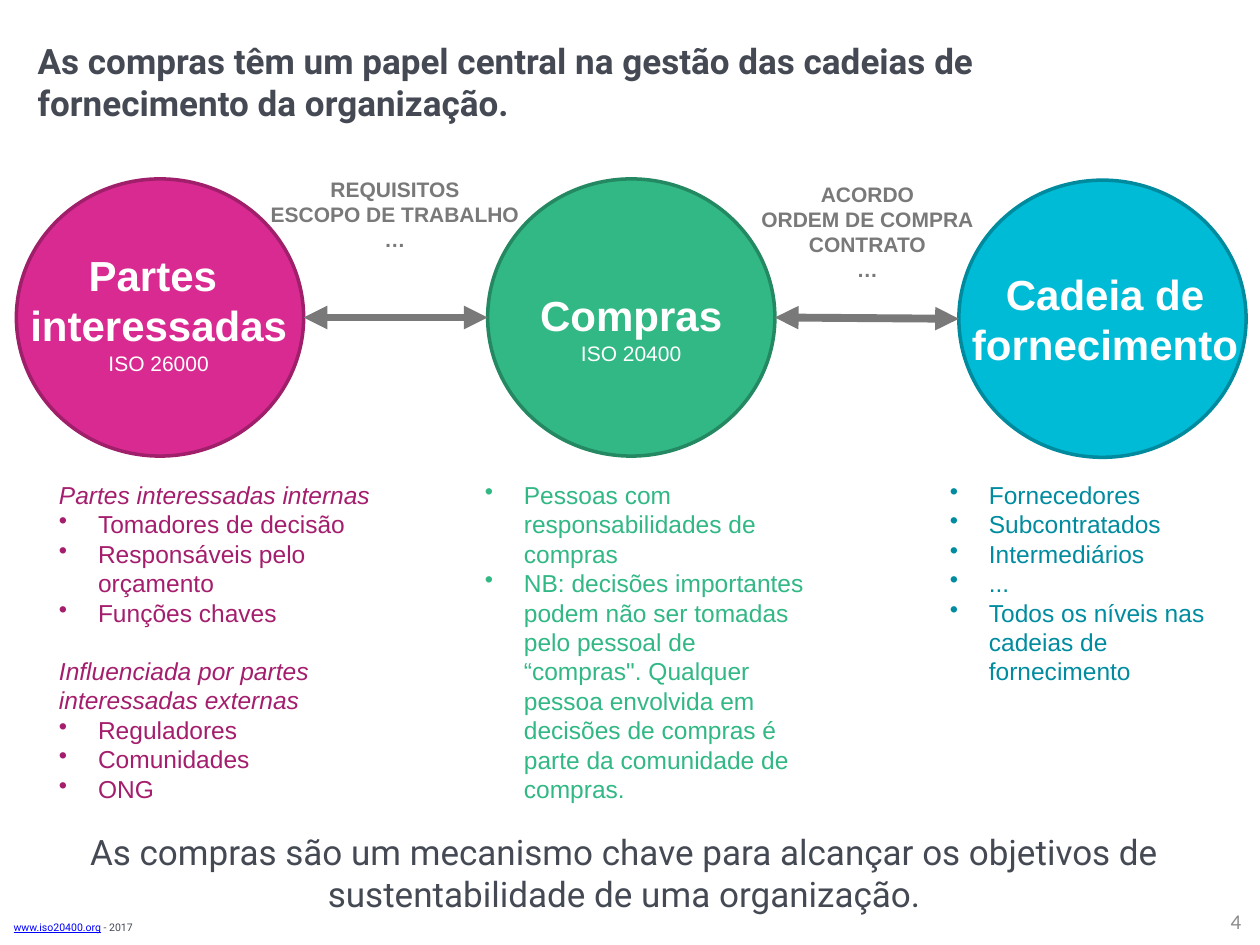
"""Build a slide on the central role of procurement in supply chains."""
import pptx
import pptx.dml.color
import pptx.enum.shapes
import pptx.enum.text
import pptx.oxml.ns
import pptx.util
from lxml import etree

Inches = pptx.util.Inches
Pt = pptx.util.Pt
ALIGN = {
    "left": pptx.enum.text.PP_ALIGN.LEFT,
    "center": pptx.enum.text.PP_ALIGN.CENTER,
    "right": pptx.enum.text.PP_ALIGN.RIGHT,
}
ANCHOR = {
    "top": pptx.enum.text.MSO_ANCHOR.TOP,
    "middle": pptx.enum.text.MSO_ANCHOR.MIDDLE,
}

DARK, GRAY, WHITE = "444953", "797979", "FFFFFF"
CIRCLE_WIDTH, CIRCLE_HEIGHT = 2.28, 2.2
CIRCLES = [
    (0.13, 1.42, "D82A91", "A01F6B"),
    (3.87, 1.42, "31B885", "248862"),
    (7.61, 1.43, "00BBD6", "008A9E"),
]
CIRCLE_TEXTS = [
    ((0.13, 1.93, 2.26, 1.11), False,
     ["Partes ", "interessadas", {"text": "ISO 26000", "size": 12, "bold": False}]),
    ((4.18, 2.25, 1.66, 0.71), False,
     ["Compras", {"text": "ISO 20400", "size": 12, "bold": False}]),
    ((7, 2.08, 3.54, 0.91), True, ["Cadeia de fornecimento"]),
]
ARROW_LABELS = [
    ((1.72, 1.35, 2.83, 0.71), "REQUISITOS\nESCOPO DE TRABALHO\n…"),
    ((5.47, 1.39, 2.83, 0.91), "ACORDO\nORDEM DE COMPRA\nCONTRATO\n…"),
]
COLUMNS = [
    ((0.37, 3.76, 2.83, 2.69), "A41E6D", [
        ("Partes interessadas internas",
         ["Tomadores de decisão", "Responsáveis pelo orçamento", "Funções chaves"]),
        ("Influenciada por partes interessadas externas",
         ["Reguladores", "Comunidades", "ONG"]),
    ]),
    ((3.75, 3.76, 2.83, 2.69), "31B885", [
        (None, [
            "Pessoas com responsabilidades de compras",
            "NB: decisões importantes podem não ser tomadas pelo pessoal de “compras\". "
            "Qualquer pessoa envolvida em decisões de compras é parte da comunidade de compras.",
        ]),
    ]),
    ((7.44, 3.76, 2.46, 1.75), "008CA0", [
        (None, ["Fornecedores", "Subcontratados", "Intermediários", "...",
                "Todos os níveis nas cadeias de fornecimento"]),
    ]),
]
TITLE = "As compras têm um papel central na gestão das cadeias de fornecimento da organização."
MESSAGE = ("As compras são um mecanismo chave para alcançar os objetivos de "
           "sustentabilidade de uma organização.")


def rgb(color):
    return pptx.dml.color.RGBColor.from_string(color)


def add_bullet(paragraph):
    properties = paragraph._p.get_or_add_pPr()
    properties.set("marL", str(Inches(0.31)))
    properties.set("indent", str(-Inches(0.31)))
    bullet = etree.SubElement(properties, pptx.oxml.ns.qn("a:buChar"))
    bullet.set("char", "•")


def add_runs(paragraph, text, style):
    for index, line in enumerate(text.split("\n")):
        if index:
            paragraph.add_line_break()
        run = paragraph.add_run()
        run.text = line
        run.font.name = style["font"]
        run.font.size = Pt(style["size"])
        run.font.bold = style["bold"]
        run.font.italic = style["italic"]
        run.font.underline = style["underline"]
        run.font.color.rgb = rgb(style["color"])


def add_text(slide, box, paragraphs, wrap=True, anchor="top", align="left", **style):
    """Add a text box; a paragraph is a string, a dict of formats, or a list of runs."""
    base = {"font": "Arial", "size": 14, "color": DARK, "bold": False,
            "italic": False, "underline": False} | style
    frame = slide.shapes.add_textbox(*map(Inches, box)).text_frame
    frame.word_wrap = wrap
    frame.vertical_anchor = ANCHOR[anchor]
    for index, content in enumerate(paragraphs):
        paragraph = frame.add_paragraph() if index else frame.paragraphs[0]
        paragraph.alignment = ALIGN[align]
        for part in content if isinstance(content, list) else [content]:
            part = part if isinstance(part, dict) else {"text": part}
            if part.get("gap"):
                paragraph.space_before = Pt(part["gap"])
            if part.get("bullet"):
                add_bullet(paragraph)
            add_runs(paragraph, part["text"], base | part)


def add_circle(slide, left, top, fill, line):
    shape = slide.shapes.add_shape(
        pptx.enum.shapes.MSO_SHAPE.OVAL,
        *map(Inches, (left, top, CIRCLE_WIDTH, CIRCLE_HEIGHT)))
    shape.shadow.inherit = False
    shape.fill.solid()
    shape.fill.fore_color.rgb = rgb(fill)
    shape.line.color.rgb = rgb(line)
    shape.line.width = Pt(2)


def add_double_arrow(slide, start, end):
    connector = slide.shapes.add_connector(
        pptx.enum.shapes.MSO_CONNECTOR.STRAIGHT, *map(Inches, start + end))
    connector.line.color.rgb = rgb(GRAY)
    connector.line.width = Pt(4.5)
    line = connector.line._get_or_add_ln()
    for tag in ("a:headEnd", "a:tailEnd"):
        etree.SubElement(line, pptx.oxml.ns.qn(tag)).set("type", "triangle")
    etree.SubElement(connector._element.spPr, pptx.oxml.ns.qn("a:effectLst"))


def column_paragraphs(sections):
    paragraphs = []
    for heading, items in sections:
        if heading:
            gap = 16.5 if paragraphs else 0
            paragraphs.append({"text": heading, "italic": True, "gap": gap})
        paragraphs += [{"text": item, "bullet": True} for item in items]
    return paragraphs


def main():
    presentation = pptx.Presentation()
    presentation.slide_width, presentation.slide_height = Inches(10), Inches(7.5)
    slide = presentation.slides.add_slide(presentation.slide_layouts[6])

    add_text(slide, (0.01, 7.26, 6.47, 0.2),
             [[{"text": "www.iso20400.org", "color": "0000FF", "underline": True}, " - 2017"]],
             font="Roboto", size=6)
    add_text(slide, (0.2, 0.43, 7.68, 0.43), [TITLE],
             anchor="middle", font="Roboto", size=20, bold=True)
    add_text(slide, (7.62, 7.12, 2.33, 0.38), ["4"], anchor="middle", align="right",
             font="Calibri", size=12, color="8C8C8C")

    for circle in CIRCLES:
        add_circle(slide, *circle)
    for (left, top, *_), (next_left, next_top, *_) in zip(CIRCLES, CIRCLES[1:]):
        add_double_arrow(slide, (left + CIRCLE_WIDTH, top + CIRCLE_HEIGHT / 2),
                         (next_left, next_top + CIRCLE_HEIGHT / 2))
    for box, wrap, paragraphs in CIRCLE_TEXTS:
        add_text(slide, box, paragraphs, wrap=wrap, align="center",
                 size=24, bold=True, color=WHITE)
    for box, label in ARROW_LABELS:
        add_text(slide, box, [label], align="center", size=12, bold=True, color=GRAY)
    for box, color, sections in COLUMNS:
        add_text(slide, box, column_paragraphs(sections), color=color)
    add_text(slide, (0.35, 6.54, 9.21, 0.77), [MESSAGE],
             align="center", font="Roboto", size=20)

    presentation.save("out.pptx")


if __name__ == "__main__":
    main()
